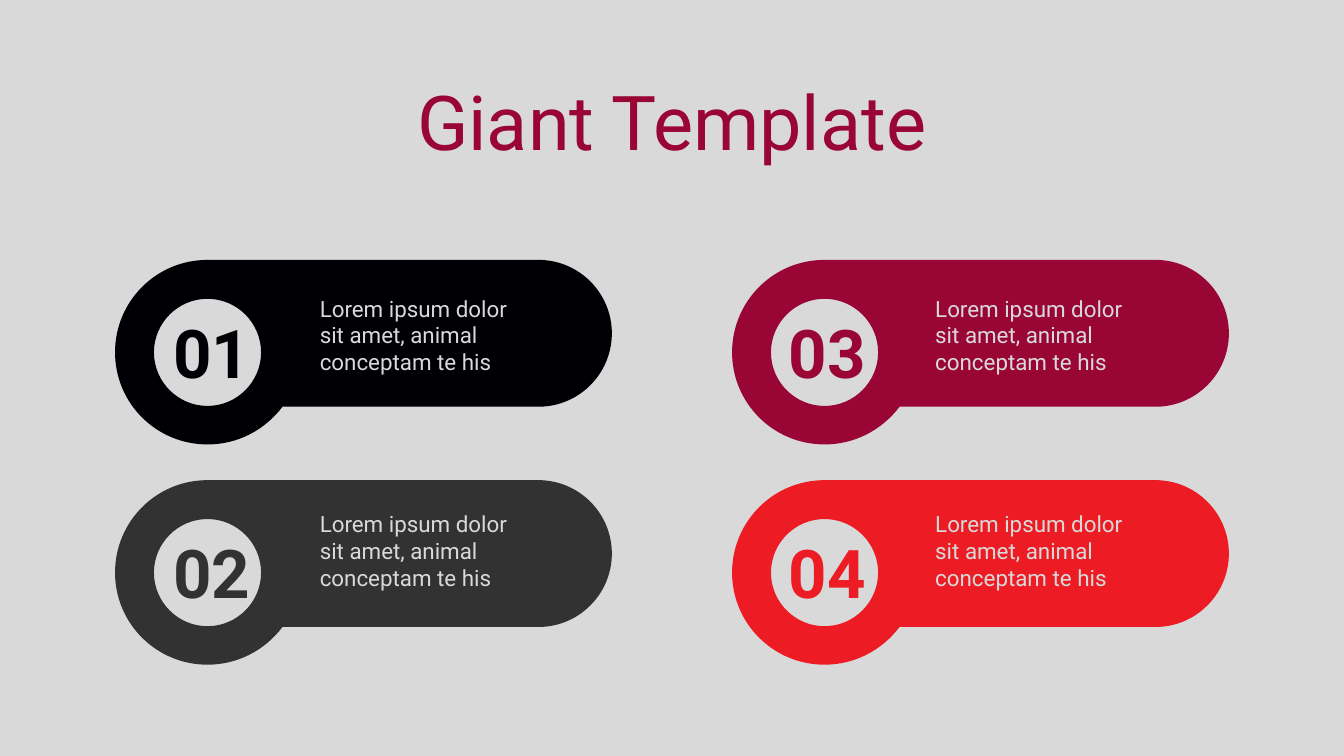
from lxml import etree
from pptx import Presentation
from pptx.dml.color import RGBColor
from pptx.enum.text import MSO_ANCHOR, MSO_AUTO_SIZE, PP_ALIGN
from pptx.oxml.ns import qn
from pptx.util import Cm, Pt

CENTER = PP_ALIGN.CENTER
LEFT = PP_ALIGN.LEFT
TOP = MSO_ANCHOR.TOP
MIDDLE = MSO_ANCHOR.MIDDLE
GROW = MSO_AUTO_SIZE.SHAPE_TO_FIT_TEXT
FIXED = MSO_AUTO_SIZE.NONE

FONT = "Roboto"
PAPER = "D9D9D9"
WINE = "990535"
NOTE = "Lorem ipsum dolor sit amet, animal conceptam te his"
COLORS = ["000004", "323232", WINE, "ED1C24"]

WIDTH = 12.52
HEIGHT = 4.65
MOVE, LINE, CURVE, CLOSE = "moveTo", "lnTo", "cubicBezTo", "close"
EDGE = [
    (MOVE, (10.67, 0)),
    (LINE, (2.33, 0)),
    (CURVE, (1.04, 0), (0, 1.04), (0, 2.33)),
    (CURVE, (0, 3.61), (1.04, 4.65), (2.33, 4.65)),
    (CURVE, (3.1, 4.65), (3.78, 4.28), (4.22, 3.7)),
    (LINE, (10.67, 3.7)),
    (CURVE, (11.69, 3.7), (12.52, 2.87), (12.52, 1.85)),
    (CURVE, (12.52, 0.83), (11.69, 0), (10.67, 0)),
    (CLOSE,),
]


def paint(fill, color):
    fill.solid()
    fill.fore_color.rgb = RGBColor.from_string(color)


def ring(x, y, radius):
    bend = radius * 0.55
    steps = [(MOVE, (x - radius, y))]
    for a, b in [(-1, 0), (0, -1), (1, 0), (0, 1)]:
        c, d = -b, a
        steps.append((
            CURVE,
            (x + a * radius + c * bend, y + b * radius + d * bend),
            (x + c * radius + a * bend, y + d * radius + b * bend),
            (x + c * radius, y + d * radius),
        ))
    return steps + [(CLOSE,)]


def trace(shape, steps):
    route = next(shape.element.iter(qn("a:path")))
    for old in list(route):
        route.remove(old)
    for kind, *points in steps:
        step = etree.SubElement(route, qn("a:" + kind))
        for x, y in points:
            etree.SubElement(step, qn("a:pt"), x=str(Cm(x)), y=str(Cm(y)))


def label(shapes, box, text, size, color, bold=False, align=LEFT, anchor=TOP, fit=GROW):
    frame = shapes.add_textbox(*[Cm(n) for n in box]).text_frame
    frame.text = text
    frame.word_wrap = True
    frame.auto_size = fit
    frame.vertical_anchor = anchor
    para = frame.paragraphs[0]
    para.alignment = align
    font = para.runs[0].font
    font.name = FONT
    font.size = Pt(size)
    font.bold = bold
    font.color.rgb = RGBColor.from_string(color)
    return para


def badge(shapes, x, y, color):
    left, top, right, base = Cm(x), Cm(y), Cm(x) + Cm(WIDTH), Cm(y) + Cm(HEIGHT)
    pen = shapes.build_freeform(left, top, scale=1.0)
    pen.add_line_segments([(right, top), (right, base), (left, base)])
    shape = pen.convert_to_shape()
    trace(shape, EDGE + ring(2.33, 2.33, 1.35))
    shape.shadow.inherit = False
    paint(shape.fill, color)
    shape.line.fill.background()


def card(slide, x, y, number, color, shift, lift):
    shapes = slide.shapes.add_group_shape().shapes
    badge(shapes, x, y, color)
    label(shapes, (x + 0.91 - shift, y + 1.17, 3.05, 2.31), number, 48, color,
          bold=True, align=CENTER)
    note = label(shapes, (x + 4.91 - shift, y + 0.75 - lift, 5.79, 2.31), NOTE, 16,
                 PAPER, fit=FIXED)
    note.space_before = Pt(20)


def title(slide, box):
    para = label(slide.shapes, box, "Giant Template", 54, WINE, align=CENTER, anchor=MIDDLE)
    para.line_spacing = 0.9


def main():
    deck = Presentation()
    deck.slide_width = Cm(33.87)
    deck.slide_height = Cm(19.05)
    slide = deck.slides.add_slide(deck.slide_layouts[6])
    paint(slide.background.fill, PAPER)
    for i, color in enumerate(COLORS):
        col, row = divmod(i, 2)
        card(slide, 2.9 + 15.55 * col, 6.55 + 5.55 * row, f"{i + 1:02}", color,
             0.04 * col, 0.12 * row)
    title(slide, (8.41, 2.01, 17.04, 2.34))
    deck.save("out.pptx")


if __name__ == "__main__":
    main()
